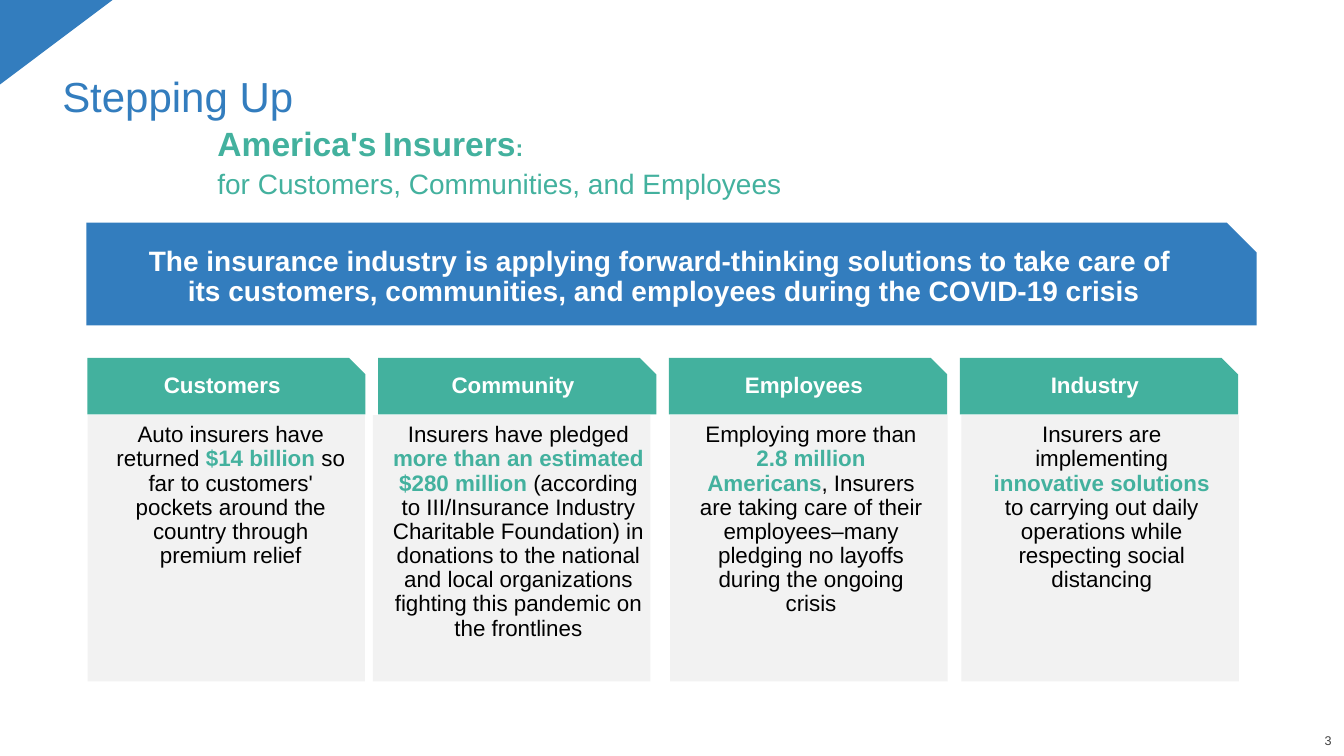
from dataclasses import dataclass

from pptx import Presentation
from pptx.dml.color import RGBColor
from pptx.enum.shapes import MSO_SHAPE
from pptx.enum.text import MSO_ANCHOR, PP_ALIGN
from pptx.shapes.autoshape import Shape
from pptx.slide import Slide
from pptx.util import Cm, Pt

RECT, SNIP = MSO_SHAPE.RECTANGLE, MSO_SHAPE.SNIP_1_RECTANGLE
CORNER = MSO_SHAPE.RIGHT_TRIANGLE
LEFT, CENTER, RIGHT = PP_ALIGN.LEFT, PP_ALIGN.CENTER, PP_ALIGN.RIGHT
TOP, MIDDLE, BOTTOM = MSO_ANCHOR.TOP, MSO_ANCHOR.MIDDLE, MSO_ANCHOR.BOTTOM

COLORS = {
    "blue": "337DBE",
    "green": "43B19E",
    "pale": "F2F2F2",
    "white": "FFFFFF",
    "black": "000000",
    "gray": "404040",
}
FONT = "Arial"
START, PITCH = 2.2, 7.33
PAD = (0.25, 0.13, 0.25, 0.13)
SNIP_PAD = (0.38, 0.18, 0.38, 0.38)


@dataclass
class Box:
    """A place on the slide, in centimetres."""
    left: float
    top: float
    width: float
    height: float

    def lengths(self) -> tuple[Cm, Cm, Cm, Cm]:
        return Cm(self.left), Cm(self.top), Cm(self.width), Cm(self.height)


@dataclass
class Run:
    text: str
    color: str = "black"
    size: float = 16
    bold: bool = False


@dataclass
class Column:
    head: str
    before: str
    key: str
    after: str
    card_left: float
    text_left: float
    text_width: float


COLUMNS = [
    Column("Customers", "Auto insurers have returned ", "$14 billion ",
           "so far to customers' pockets around the country through premium relief",
           2.21, 2.64, 6.35),
    Column("Community", "Insurers have pledged ",
           "more than an estimated $280 million ",
           "(according to III/Insurance Industry Charitable Foundation) in donations "
           "to the national and local organizations fighting this pandemic on "
           "the frontlines",
           9.4, 9.65, 6.83),
    Column("Employees", "Employing more than ", "2.8 million Americans",
           ", Insurers are taking care of their employees–many pledging no layoffs "
           "during the ongoing crisis",
           16.89, 17.25, 6.38),
    Column("Industry", "Insurers are implementing ", "innovative solutions ",
           "to carrying out daily operations while respecting social distancing",
           24.23, 24.64, 6.25),
]


def rgb(name: str) -> RGBColor:
    return RGBColor.from_string(COLORS[name])


def write(shape: Shape, *lines: list[Run], align: PP_ALIGN = LEFT,
          anchor: MSO_ANCHOR = TOP, spacing: float = 1.0,
          pad: tuple[float, ...] = PAD) -> None:
    """Fill the shape with one paragraph, with a break between lines."""
    frame = shape.text_frame
    frame.word_wrap = True
    frame.vertical_anchor = anchor
    (frame.margin_left, frame.margin_top,
     frame.margin_right, frame.margin_bottom) = map(Cm, pad)
    para = frame.paragraphs[0]
    para.alignment = align
    para.line_spacing = spacing
    for row, line in enumerate(lines):
        if row:
            para.add_line_break()
        for part in line:
            run = para.add_run()
            run.text = part.text
            run.font.name = FONT
            run.font.size = Pt(part.size)
            run.font.bold = part.bold
            run.font.color.rgb = rgb(part.color)


def add_block(slide: Slide, kind: MSO_SHAPE, box: Box, fill: str) -> Shape:
    shape = slide.shapes.add_shape(kind, *box.lengths())
    shape.shadow.inherit = False
    shape.fill.solid()
    shape.fill.fore_color.rgb = rgb(fill)
    shape.line.fill.background()
    return shape


def add_label(slide: Slide, box: Box, fill: str, *lines: list[Run]) -> None:
    """Draw a bar with a cut corner and centred text."""
    shape = add_block(slide, SNIP, box, fill)
    shape.adjustments[0] = 0.292
    write(shape, *lines, align=CENTER, anchor=MIDDLE, spacing=0.9, pad=SNIP_PAD)


def add_text(slide: Slide, box: Box, *runs: Run, **style) -> None:
    write(slide.shapes.add_textbox(*box.lengths()), list(runs), **style)


def add_column(slide: Slide, index: int, col: Column) -> None:
    add_block(slide, RECT, Box(col.card_left, 10.46, 6.99, 6.71), "pale")
    add_label(slide, Box(START + index * PITCH, 9.02, 7.01, 1.42), "green",
              [Run(col.head, "white", bold=True)])
    add_text(slide, Box(col.text_left, 10.54, col.text_width, 6.4),
             Run(col.before), Run(col.key, "green", bold=True), Run(col.after),
             align=CENTER, spacing=0.9)


def main() -> None:
    deck = Presentation()
    deck.slide_width, deck.slide_height = Cm(33.87), Cm(19.05)
    slide = deck.slides.add_slide(deck.slide_layouts[6])

    corner = add_block(slide, CORNER, Box(0.36, -0.36, 2.13, 2.84), "blue")
    corner.rotation = 90
    add_text(slide, Box(31.93, 18.52, 1.63, 0.33), Run("3", "gray", 9),
             align=RIGHT, anchor=BOTTOM, spacing=0.9, pad=(0, 0, 0, 0))
    add_text(slide, Box(1.32, 1.78, 31.32, 1.3), Run("Stepping Up", "blue", 30),
             spacing=0.9)
    add_text(slide, Box(5.23, 2.97, 9.22, 1.27),
             Run("America's", "green", 24, True), Run(" ", "green", 16.5, True),
             Run("Insurers", "green", 24, True), Run(":", "green", 16.5, True))
    add_text(slide, Box(5.23, 4.06, 16.69, 1.12),
             Run("for Customers, Communities, and Employees", "green", 20))

    for index, col in enumerate(COLUMNS):
        add_column(slide, index, col)

    add_label(slide, Box(2.18, 5.61, 29.49, 2.59), "blue",
              [Run("The insurance industry is applying forward-thinking solutions "
                   "to take care of ", "white", 20, True)],
              [Run("its customers, communities, and employees during the "
                   "COVID-19 crisis", "white", 20, True)])
    deck.save("out.pptx")


if __name__ == "__main__":
    main()
